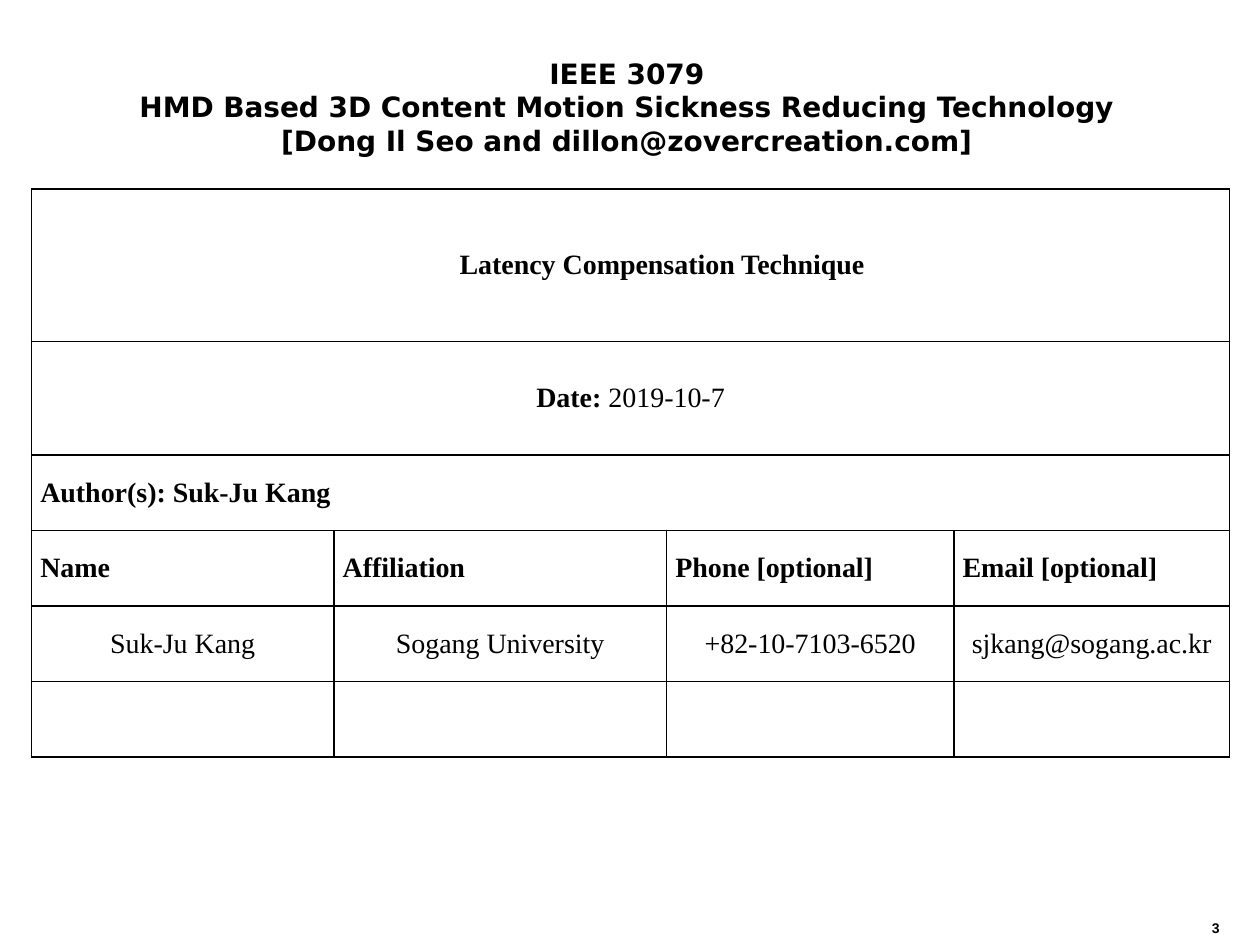
from lxml import etree
from pptx import Presentation
from pptx.dml.color import RGBColor
from pptx.enum.text import MSO_ANCHOR, MSO_AUTO_SIZE, PP_ALIGN
from pptx.oxml.ns import qn
from pptx.util import Emu, Pt

LEFT, CENTER = PP_ALIGN.LEFT, PP_ALIGN.CENTER
MIDDLE, TOP = MSO_ANCHOR.MIDDLE, MSO_ANCHOR.TOP
GROW, FIXED = MSO_AUTO_SIZE.SHAPE_TO_FIT_TEXT, MSO_AUTO_SIZE.NONE

EMU_PER_PX = 9144  # 100 px to the inch
COLORS = {"ink": "000000", "paper": "FFFFFF"}
FORMATS = {
    "title": {"name": "DejaVu Sans", "size": Pt(16), "bold": True},
    "label": {"name": "Times New Roman", "size": Pt(16), "bold": True},
    "value": {"name": "Times New Roman", "size": Pt(16), "bold": False},
    "number": {"name": "Arial", "size": Pt(8), "bold": True},
}


def px(length):
    return Emu(length * EMU_PER_PX)


class SlideBuilder:
    def __init__(self, presentation):
        self.slide = presentation.slides.add_slide(presentation.slide_layouts[6])
        fill = self.slide.background.fill
        fill.solid()
        fill.fore_color.rgb = RGBColor.from_string(COLORS["paper"])

    def add_runs(self, paragraph, runs, align):
        """Fill a paragraph with (text, format name) pairs."""
        paragraph.alignment = align
        for text, style in runs:
            for index, line in enumerate(text.split("\n")):
                if index:
                    paragraph.add_line_break()
                run = paragraph.add_run()
                run.text = line
                for attribute, value in FORMATS[style].items():
                    setattr(run.font, attribute, value)
                run.font.color.rgb = RGBColor.from_string(COLORS["ink"])

    def text(self, box, paragraphs, style, align=LEFT, **frame_format):
        frame = self.slide.shapes.add_textbox(*map(px, box)).text_frame
        for attribute, value in frame_format.items():
            setattr(frame, attribute, value)
        for index, text in enumerate(paragraphs):
            paragraph = frame.add_paragraph() if index else frame.paragraphs[0]
            self.add_runs(paragraph, [(text, style)], align)

    def border(self, cell):
        """Draw a 1 pt line on all four sides of a cell."""
        properties = cell._tc.get_or_add_tcPr()
        for side in ("a:lnL", "a:lnR", "a:lnT", "a:lnB"):
            line = etree.SubElement(properties, qn(side), w=str(Pt(1)))
            solid = etree.SubElement(line, qn("a:solidFill"))
            etree.SubElement(solid, qn("a:srgbClr"), val=COLORS["ink"])

    def table(self, left, top, widths, heights):
        box = map(px, (left, top, sum(widths), sum(heights)))
        table = self.slide.shapes.add_table(len(heights), len(widths), *box).table
        table.first_row = table.horz_banding = False
        for column, width in zip(table.columns, widths):
            column.width = px(width)
        for row, height in zip(table.rows, heights):
            row.height = px(height)
        cell_format = {
            "vertical_anchor": MIDDLE,
            "margin_left": px(7), "margin_right": px(7),
            "margin_top": 0, "margin_bottom": 0,
        }
        for cell in table.iter_cells():
            self.border(cell)
            cell.fill.background()
            for attribute, value in cell_format.items():
                setattr(cell, attribute, value)
        return table

    def cell(self, cell, runs, align=LEFT, space_after=0, indent=0):
        paragraph = cell.text_frame.paragraphs[0]
        paragraph.space_after = Pt(space_after)
        if indent:
            properties = paragraph._p.get_or_add_pPr()
            properties.set("marL", str(px(indent)))
            properties.set("indent", "0")
        self.add_runs(paragraph, runs, align)


def main():
    presentation = Presentation()
    presentation.slide_width, presentation.slide_height = px(1000), px(750)
    builder = SlideBuilder(presentation)

    document = builder.table(25, 150, [240, 264, 228, 219], [121, 90] + [60] * 4)
    headings = [
        ([("Latency Compensation Technique", "label")],
         {"align": CENTER, "space_after": 12, "indent": 50}),
        ([("Date: ", "label"), ("2019-10-7", "value")],
         {"align": CENTER, "space_after": 12}),
        ([("Author(s): Suk-Ju Kang", "label")], {}),
    ]
    for row, (runs, layout) in enumerate(headings):
        document.cell(row, 0).merge(document.cell(row, 3))
        builder.cell(document.cell(row, 0), runs, **layout)

    author = {
        "Name": "Suk-Ju Kang",
        "Affiliation": "Sogang University",
        "Phone [optional]": "+82-10-7103-6520",
        "Email [optional]": "sjkang@sogang.ac.kr",
    }
    for column, (label, value) in enumerate(author.items()):
        builder.cell(document.cell(3, column), [(label, "label")])
        builder.cell(document.cell(4, column), [(value, "value")], CENTER)

    title = [
        "IEEE 3079\nHMD Based 3D Content Motion Sickness Reducing Technology",
        "[Dong Il Seo and dillon@zovercreation.com]",
    ]
    builder.text((98, 39, 799, 91), title, "title", CENTER,
                 vertical_anchor=MIDDLE, word_wrap=False, auto_size=GROW)
    builder.text((952, 725, 48, 25), ["3"], "number",
                 vertical_anchor=TOP, word_wrap=True, auto_size=FIXED)

    presentation.save("out.pptx")


if __name__ == "__main__":
    main()
